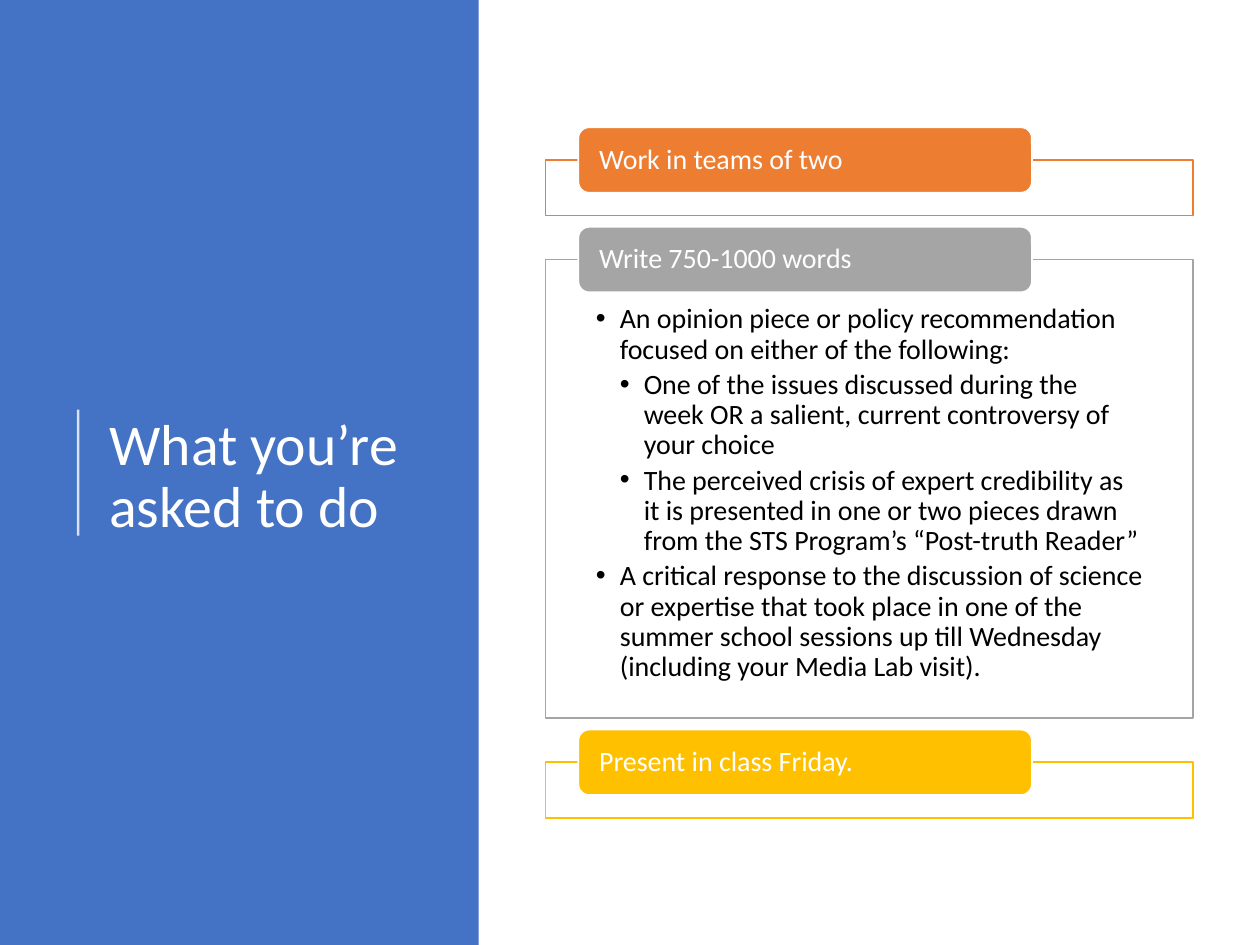
from lxml import etree
from pptx import Presentation
from pptx.dml.color import RGBColor
from pptx.enum import shapes, text
from pptx.oxml.ns import qn
from pptx.util import Emu, Inches, Pt

HUES = {"blue": "4472C4", "orange": "ED7D31", "grey": "A5A5A5",
        "gold": "FFC000", "white": "FFFFFF", "black": "000000"}
deck = Presentation()
deck.slide_width, deck.slide_height = Inches(10), Inches(7.5)
slide = deck.slides.add_slide(deck.slide_layouts[6])

# Grid of 100 columns by 75 rows
COL, ROW = deck.slide_width / 100, deck.slide_height / 75


def block(kind, x, y, w, h, fill, line=None):
    """Draw a filled shape placed in columns and rows."""
    shape = slide.shapes.add_shape(
        kind, Emu(round(x * COL)), Emu(round(y * ROW)),
        Emu(round(w * COL)), Emu(round(h * ROW)))
    shape.shadow.inherit = False
    shape.fill.solid()
    shape.fill.fore_color.rgb = RGBColor.from_string(HUES[fill])
    if line:
        shape.line.color.rgb = RGBColor.from_string(HUES[line])
        shape.line.width = Pt(1)
    else:
        shape.line.fill.background()
    return shape


def write(frame, items, size, hue, anchor, pads, after=0):
    """Fill a text frame with (level, words) items; level 0 has no bullet."""
    frame.word_wrap = True
    frame.vertical_anchor = anchor
    (frame.margin_left, frame.margin_top,
     frame.margin_right, frame.margin_bottom) = [Inches(p) for p in pads]
    for i, (level, words) in enumerate(items):
        para = frame.add_paragraph() if i else frame.paragraphs[0]
        para.alignment = text.PP_ALIGN.LEFT
        para.line_spacing = 0.9
        para.space_after = Pt(after)
        if level:
            props = para._p.get_or_add_pPr()
            props.set("marL", str(level * Inches(0.19)))
            props.set("indent", str(-Inches(0.19)))
            etree.SubElement(props, qn("a:buFont")).set("typeface", "Arial")
            etree.SubElement(props, qn("a:buChar")).set("char", "•")
        run = para.add_run()
        run.text = words
        run.font.name = "Calibri"
        run.font.size = Pt(size)
        run.font.color.rgb = RGBColor.from_string(HUES[hue])


# Left panel with title
block(shapes.MSO_SHAPE.RECTANGLE, 0, 0, 38, 75, "blue")
title = slide.shapes.add_textbox(
    Emu(round(7.7 * COL)), Emu(round(7.8 * ROW)),
    Emu(round(27.6 * COL)), Emu(round(60.2 * ROW)))
write(title.text_frame, [(0, "What you’re asked to do")], 33, "white",
      text.MSO_ANCHOR.MIDDLE, (0.1, 0.05, 0.1, 0.05))

# Rule beside the title
rule = slide.shapes.add_connector(
    shapes.MSO_CONNECTOR.STRAIGHT, Emu(round(6.2 * COL)), Emu(round(42.5 * ROW)),
    Emu(round(6.2 * COL)), Emu(round(32.5 * ROW)))
rule.line.width = Pt(1.5)
rule.line.color.rgb = RGBColor.from_string(HUES["white"])
tint = rule.line._ln.find(".//" + qn("a:srgbClr"))
etree.SubElement(tint, qn("a:alpha")).set("val", "80000")
etree.SubElement(rule._element.spPr, qn("a:effectLst"))

# Task frames, stacked with an equal gap, each with a tab on its top edge
tasks = [
    ("Work in teams of two", "orange", 4.4, []),
    ("Write 750-1000 words", "grey", 36.4, [
        (1, "An opinion piece or policy recommendation focused on either "
            "of the following:"),
        (2, "One of the issues discussed during the week OR a salient, "
            "current controversy of your choice"),
        (2, "The perceived crisis of expert credibility as it is presented "
            "in one or two pieces drawn from the STS Program’s "
            "“Post-truth Reader”"),
        (1, "A critical response to the discussion of science or expertise "
            "that took place in one of the summer school sessions up till "
            "Wednesday (including your Media Lab visit)."),
    ]),
    ("Present in class Friday.", "gold", 4.4, []),
]
top, gap = 12.7, 3.5
for name, hue, tall, notes in tasks:
    box = block(shapes.MSO_SHAPE.RECTANGLE, 43.3, top, 51.4, tall, "white", hue)
    tint = box._element.spPr.find(qn("a:solidFill")).find(qn("a:srgbClr"))
    etree.SubElement(tint, qn("a:alpha")).set("val", "90000")
    write(box.text_frame, notes, 16, "black", text.MSO_ANCHOR.TOP,
          (0.4, 0.36, 0.4, 0.12), 2.9)
    tab = block(shapes.MSO_SHAPE.ROUNDED_RECTANGLE, 45.9, top - 2.6, 36, 5.2,
                hue, "white")
    write(tab.text_frame, [(0, name)], 16, "white", text.MSO_ANCHOR.MIDDLE,
          (0.14, 0, 0.14, 0))
    top += tall + gap

deck.save("out.pptx")
